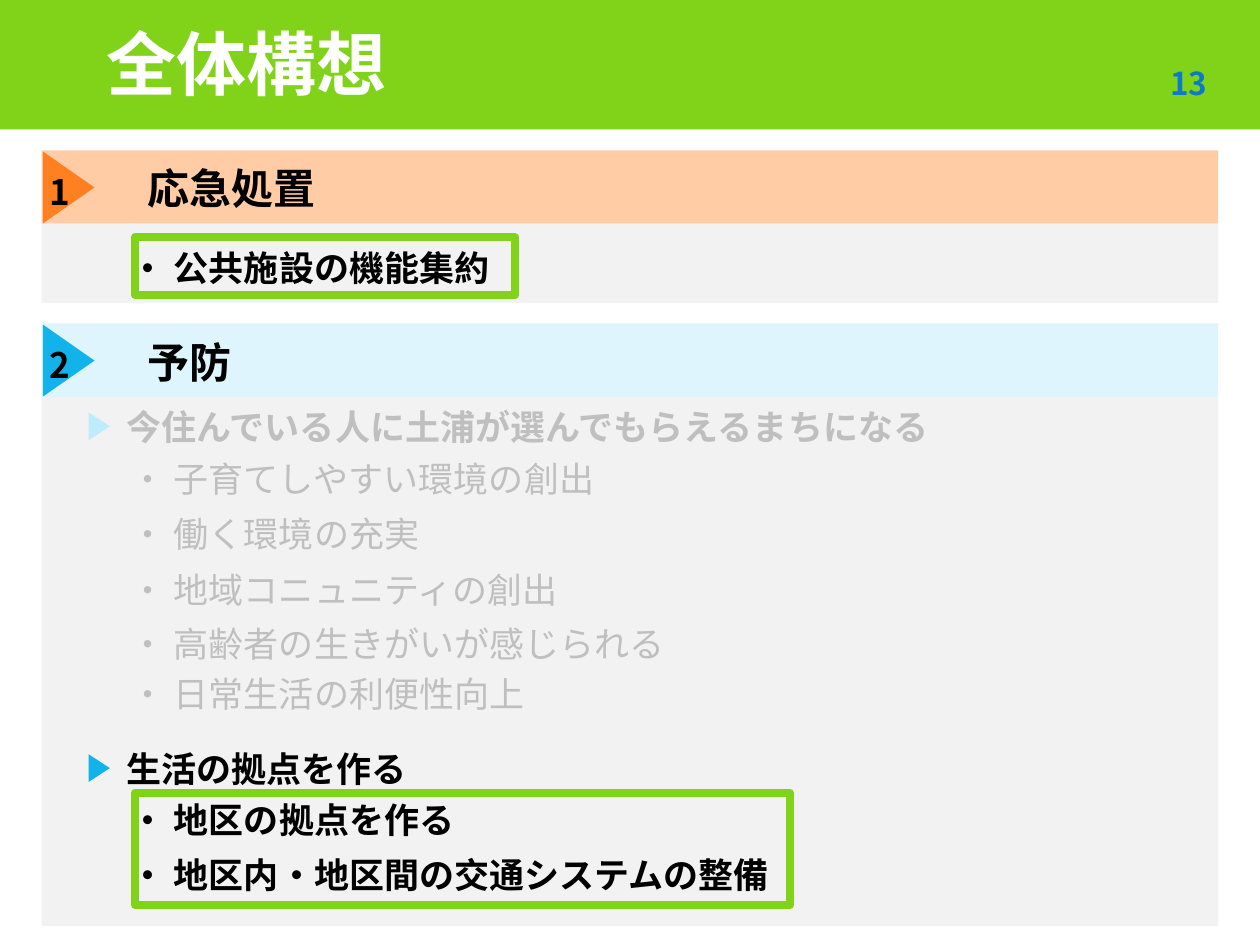
from dataclasses import dataclass

from lxml import etree
from pptx import Presentation
from pptx import util as u
from pptx.dml.color import RGBColor
from pptx.enum import shapes, text
from pptx.oxml.ns import qn


@dataclass(frozen=True)
class Theme:
    font: str = "Noto Sans CJK JP"
    green: str = "81D31A"
    white: str = "FFFFFF"
    black: str = "000000"
    muted: str = "BFBFBF"
    panel: str = "F2F2F2"
    page_blue: str = "0D79CA"
    orange: str = "FF8021"
    orange_pale: str = "FFCCA6"
    blue: str = "12B2EB"
    blue_pale: str = "DFF5FD"
    blue_muted: str = "BFEBFA"
    title_size: float = 40
    heading_size: float = 24
    body_size: float = 20
    page_size: float = 18
    frame_width: float = 4.5


class OutlineSlide:
    """Draws on one slide; all positions and sizes are in centimetres."""

    def __init__(self, slide, theme):
        self.slide = slide
        self.theme = theme

    def block(self, left, top, width, height, fill=None,
              kind=shapes.MSO_SHAPE.RECTANGLE):
        shape = self.slide.shapes.add_shape(
            kind, u.Cm(left), u.Cm(top), u.Cm(width), u.Cm(height))
        shape.shadow.inherit = False
        shape.line.fill.background()
        if fill:
            shape.fill.solid()
            shape.fill.fore_color.rgb = RGBColor.from_string(fill)
        else:
            shape.fill.background()
        return shape

    def arrowhead(self, left, top, width, height, fill):
        """Triangle turned to point right; width and height are unrotated."""
        shape = self.block(left, top, width, height, fill,
                           shapes.MSO_SHAPE.ISOSCELES_TRIANGLE)
        shape.rotation = 90

    def frame(self, left, top, width, height):
        """Unfilled highlight rectangle with rounded line joins."""
        line = self.block(left, top, width, height).line
        line.fill.solid()
        line.fill.fore_color.rgb = RGBColor.from_string(self.theme.green)
        line.width = u.Pt(self.theme.frame_width)
        etree.SubElement(line._get_or_add_ln(), qn("a:round"))

    def label(self, content, left, top, width, height, size, color, bold=True):
        box = self.slide.shapes.add_textbox(
            u.Cm(left), u.Cm(top), u.Cm(width), u.Cm(height))
        box.text_frame.word_wrap = True
        paragraph = box.text_frame.paragraphs[0]
        run = paragraph.add_run()
        run.text = content
        font = run.font
        font.name = self.theme.font
        font.size = u.Pt(size)
        font.bold = bold
        font.color.rgb = RGBColor.from_string(color)
        east_asian = etree.SubElement(run._r.get_or_add_rPr(), qn("a:ea"))
        east_asian.set("typeface", self.theme.font)
        return box

    def header(self, title, page):
        theme = self.theme
        self.block(0, -0.08, 25.4, 2.69, theme.green)
        box = self.label(title, 1.9, 0.51, 21.59, 1.78,
                         theme.title_size, theme.white)
        box.text_frame.vertical_anchor = text.MSO_ANCHOR.MIDDLE
        box.text_frame.paragraphs[0].line_spacing = 0.85
        self.label(page, 23.34, 1.17, 1.5, 1.09,
                   theme.page_size, theme.page_blue)

    def section(self, number, heading, top, body_height, accent, band):
        theme = self.theme
        self.block(0.84, top, 23.72, 1.48, band)
        self.arrowhead(0.66, top + 0.23, 1.45, 1.04, accent)
        self.label(number, 0.74, top + 0.28, 1.09, 1.12,
                   theme.body_size, theme.black)
        self.block(0.84, top + 1.48, 23.72, body_height, theme.panel)
        self.label(heading, 2.72, top + 0.13, 21.36, 1.27,
                   theme.heading_size, theme.black)

    def topic(self, content, top, color, marker):
        self.label(content, 2.3, top, 21.03, 1.12, self.theme.body_size, color)
        self.arrowhead(1.72, top + 0.33, 0.56, 0.43, marker)

    def item(self, content, top, active):
        color = self.theme.black if active else self.theme.muted
        self.label("・ " + content, 2.39, top, 21.11, 1.12,
                   self.theme.body_size, color, active)


def main():
    presentation = Presentation()
    presentation.slide_width = u.Cm(25.4)
    presentation.slide_height = u.Cm(19.05)
    theme = Theme()
    outline = OutlineSlide(
        presentation.slides.add_slide(presentation.slide_layouts[6]), theme)

    outline.header("全体構想", "13")
    outline.section("1", "応急処置", 3.03, 1.6, theme.orange, theme.orange_pale)
    outline.section("2", "予防", 6.52, 10.67, theme.blue, theme.blue_pale)

    outline.topic("今住んでいる人に土浦が選んでもらえるまちになる", 8.05,
                  theme.muted, theme.blue_muted)
    outline.topic("生活の拠点を作る", 14.94, theme.black, theme.blue)

    items = [
        ("公共施設の機能集約", 4.85, True),
        ("子育てしやすい環境の創出", 9.09, False),
        ("働く環境の充実", 10.21, False),
        ("地域コニュニティの創出", 11.33, False),
        ("高齢者の生きがいが感じられる", 12.42, False),
        ("日常生活の利便性向上", 13.44, False),
        ("地区の拠点を作る", 15.98, True),
        ("地区内・地区間の交通システムの整備", 17.09, True),
    ]
    for content, top, active in items:
        outline.item(content, top, active)

    outline.frame(2.72, 15.98, 13.21, 2.26)
    outline.frame(2.72, 4.78, 7.67, 1.17)
    presentation.save("out.pptx")


if __name__ == "__main__":
    main()
